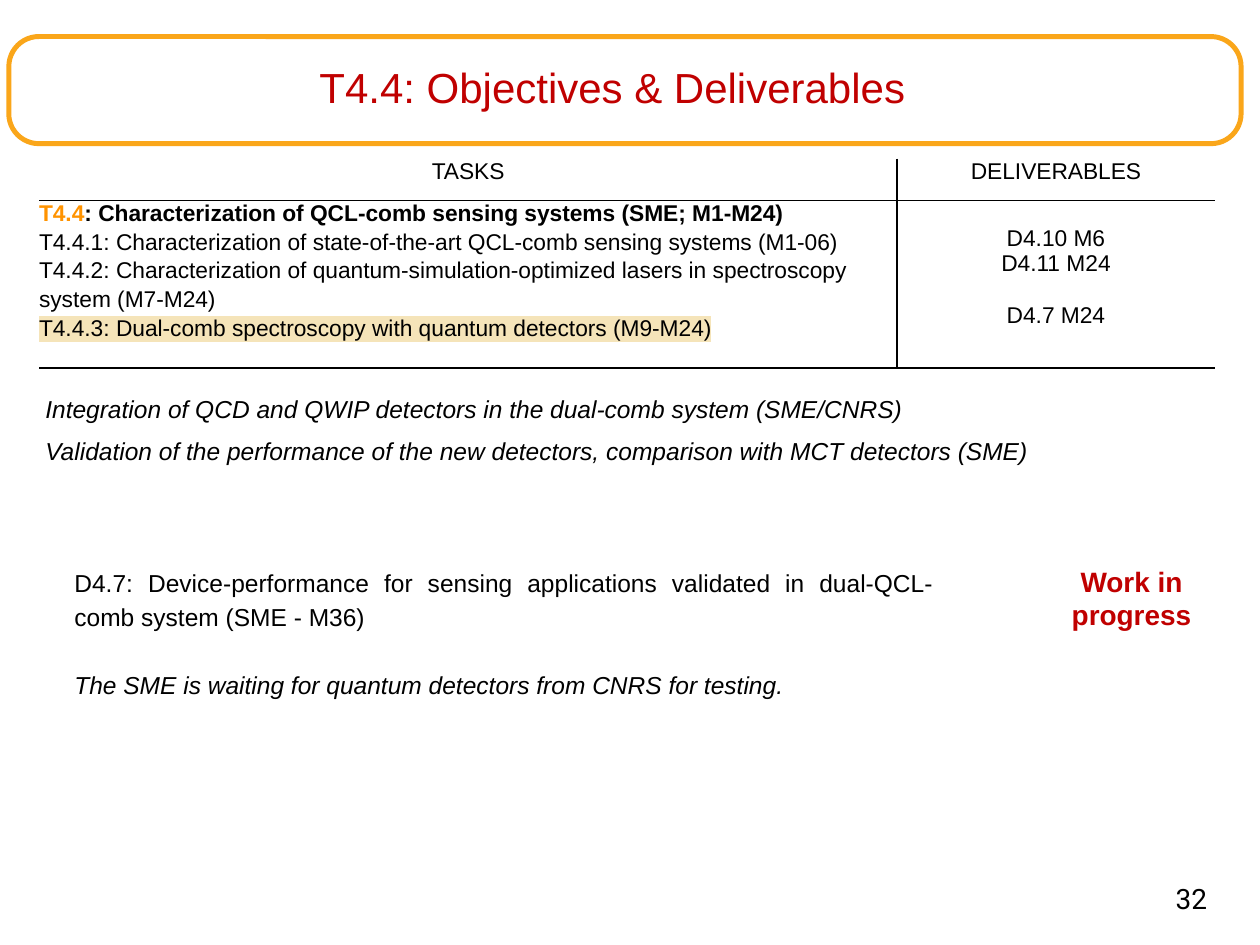
from collections import namedtuple

from lxml.etree import SubElement
from pptx import Presentation
from pptx.dml.color import RGBColor
from pptx.enum.shapes import MSO_SHAPE as Shape
from pptx.enum.text import MSO_ANCHOR as Anchor, PP_ALIGN as Align
from pptx.oxml.ns import qn
from pptx.util import Inches, Pt

BLACK = RGBColor(0x00, 0x00, 0x00)
RED = RGBColor(0xC0, 0x00, 0x00)
AMBER = RGBColor(0xFA, 0xA6, 0x1A)
ORANGE = RGBColor(0xFF, 0x93, 0x00)
SAND = RGBColor(0xF5, 0xE4, 0xB9)

SLIDE_WIDTH, SLIDE_HEIGHT = Inches(10), Inches(7.5)
COLUMNS, ROWS = 100, 75
Box = namedtuple("Box", "left top width height")


def across(columns):
    """Return the length of a number of grid columns."""
    return round(SLIDE_WIDTH * columns / COLUMNS)


def down(rows):
    """Return the length of a number of grid rows."""
    return round(SLIDE_HEIGHT * rows / ROWS)


def place(box):
    """Turn a grid box into left, top, width and height."""
    return across(box.left), down(box.top), across(box.width), down(box.height)


def style(paragraph, size, color=BLACK, name="Arial", align=Align.LEFT,
          spacing=None, bold=False, italic=False):
    """Format a whole paragraph."""
    paragraph.alignment = align
    if spacing:
        paragraph.line_spacing = spacing
    font = paragraph.font
    font.size, font.name, font.bold, font.italic = Pt(size), name, bold, italic
    font.color.rgb = color


def fill_frame(frame, lines, size, **format_options):
    """Write equally formatted lines and return their paragraphs."""
    for _ in lines[1:]:
        frame.add_paragraph()
    for paragraph, line in zip(frame.paragraphs, lines):
        paragraph.add_run().text = line
        style(paragraph, size, **format_options)
    return frame.paragraphs


def add_text(slide, box, lines, size, margin=0.5, anchor=Anchor.TOP, **format_options):
    """Add a wrapping text box."""
    frame = slide.shapes.add_textbox(*place(box)).text_frame
    frame.word_wrap = True
    frame.vertical_anchor = anchor
    frame.margin_left = frame.margin_right = across(margin)
    frame.margin_top = frame.margin_bottom = down(margin)
    fill_frame(frame, lines, size, **format_options)


def add_header(slide, box):
    """Draw the rounded title frame and its title."""
    frame = slide.shapes.add_shape(Shape.ROUNDED_RECTANGLE, *place(box))
    frame.adjustments[0] = 0.28
    frame.shadow.inherit = False
    frame.fill.background()
    frame.line.color.rgb = AMBER
    frame.line.width = Pt(2.83)
    title = Box(box.left + 16.8, box.top + 2.4, 62.2, 3.6)
    add_text(slide, title, ["T4.4: Objectives & Deliverables"], 24, margin=0,
             anchor=Anchor.MIDDLE, color=RED, align=Align.CENTER, spacing=0.9)


def add_borders(cell, sides):
    """Draw thin black lines on the named sides and hide the others."""
    properties = cell._tc.get_or_add_tcPr()
    for side in "LRTB":
        line = SubElement(properties, qn(f"a:ln{side}"), w=str(Pt(1)))
        if side in sides:
            paint = SubElement(line, qn("a:solidFill"))
            SubElement(paint, qn("a:srgbClr"), val=str(BLACK))
        else:
            SubElement(line, qn("a:noFill"))


def highlight(run, color):
    """Set the text background of a run."""
    mark = SubElement(run._r.get_or_add_rPr(), qn("a:highlight"))
    SubElement(mark, qn("a:srgbClr"), val=str(color))


def fill_tasks(cell):
    """Write the task list with its heading and highlighted task."""
    tasks = fill_frame(cell.text_frame, [
        "T4.4",
        "T4.4.1: Characterization of state-of-the-art QCL-comb sensing systems (M1-06)",
        "T4.4.2: Characterization of quantum-simulation-optimized lasers in "
        "spectroscopy system (M7-M24)",
        "T4.4.3: Dual-comb spectroscopy with quantum detectors (M9-M24)",
    ], 13, spacing=1.14)
    heading = tasks[0]
    style(heading, 13, align=Align.JUSTIFY, spacing=1.0, bold=True)
    heading.runs[0].font.color.rgb = ORANGE
    heading.add_run().text = (
        ": Characterization of QCL-comb sensing systems (SME; M1-M24)")
    highlight(tasks[-1].runs[0], SAND)


def add_task_table(slide, box):
    """Add the table of tasks and deliverables."""
    table = slide.shapes.add_table(2, 2, *place(box)).table
    table.first_row = table.horz_banding = False
    for column, share in zip(table.columns, (0.73, 0.27)):
        column.width = across(box.width * share)
    for row, share in zip(table.rows, (0.2, 0.8)):
        row.height = down(box.height * share)
    for cell, sides in zip(table.iter_cells(), ("RB", "LB", "RTB", "LTB")):
        cell.margin_left = cell.margin_right = 0
        cell.margin_top = cell.margin_bottom = 0
        add_borders(cell, sides)
        cell.fill.background()
    for column, heading in enumerate(("TASKS", "DELIVERABLES")):
        fill_frame(table.cell(0, column).text_frame, [heading], 13, align=Align.CENTER)
    fill_tasks(table.cell(1, 0))
    deliverables = table.cell(1, 1)
    deliverables.margin_top = down(2)
    dates = fill_frame(deliverables.text_frame, ["D4.10 M6", "D4.11 M24", "D4.7 M24"],
                       13, align=Align.CENTER)
    dates[-1].space_before = Pt(15)


def add_goals(slide, box):
    """Add the two goals under the table."""
    add_text(slide, box, [
        "Integration of QCD and QWIP detectors in the dual-comb system (SME/CNRS)",
        "Validation of the performance of the new detectors, comparison with "
        "MCT detectors (SME)",
    ], 14, spacing=1.43, italic=True)


def add_status(slide, box):
    """Add the deliverable, its state and the remark below."""
    add_text(slide, Box(box.left, box.top, 69.2, 6.1), [
        "D4.7: Device-performance for sensing applications validated in "
        "dual-QCL-comb system (SME - M36)"], 14, align=Align.JUSTIFY, spacing=1.14)
    add_text(slide, Box(box.left + box.width - 13.2, box.top, 13.2, 6.4),
             ["Work in progress"], 16, color=RED, align=Align.CENTER, bold=True)
    add_text(slide, Box(box.left, box.top + 8.4, 79.7, 3.5), [
        "The SME is waiting for quantum detectors from CNRS for testing."],
        14, align=Align.JUSTIFY, italic=True)


def add_page_number(slide, box):
    """Add the page number."""
    add_text(slide, box, ["32"], 16, name="Roboto", align=Align.RIGHT)


def main():
    """Build and save the slide."""
    presentation = Presentation()
    presentation.slide_width, presentation.slide_height = SLIDE_WIDTH, SLIDE_HEIGHT
    slide = presentation.slides.add_slide(presentation.slide_layouts[6])
    add_header(slide, Box(0.7, 2.9, 97.8, 8.5))
    add_page_number(slide, Box(73, 69.5, 23.3, 4))
    add_task_table(slide, Box(3.1, 12.6, 93.3, 16.6))
    add_goals(slide, Box(3.1, 29.8, 93.3, 7.3))
    add_status(slide, Box(5.4, 44.3, 91, 11.9))
    presentation.save("out.pptx")


if __name__ == "__main__":
    main()
